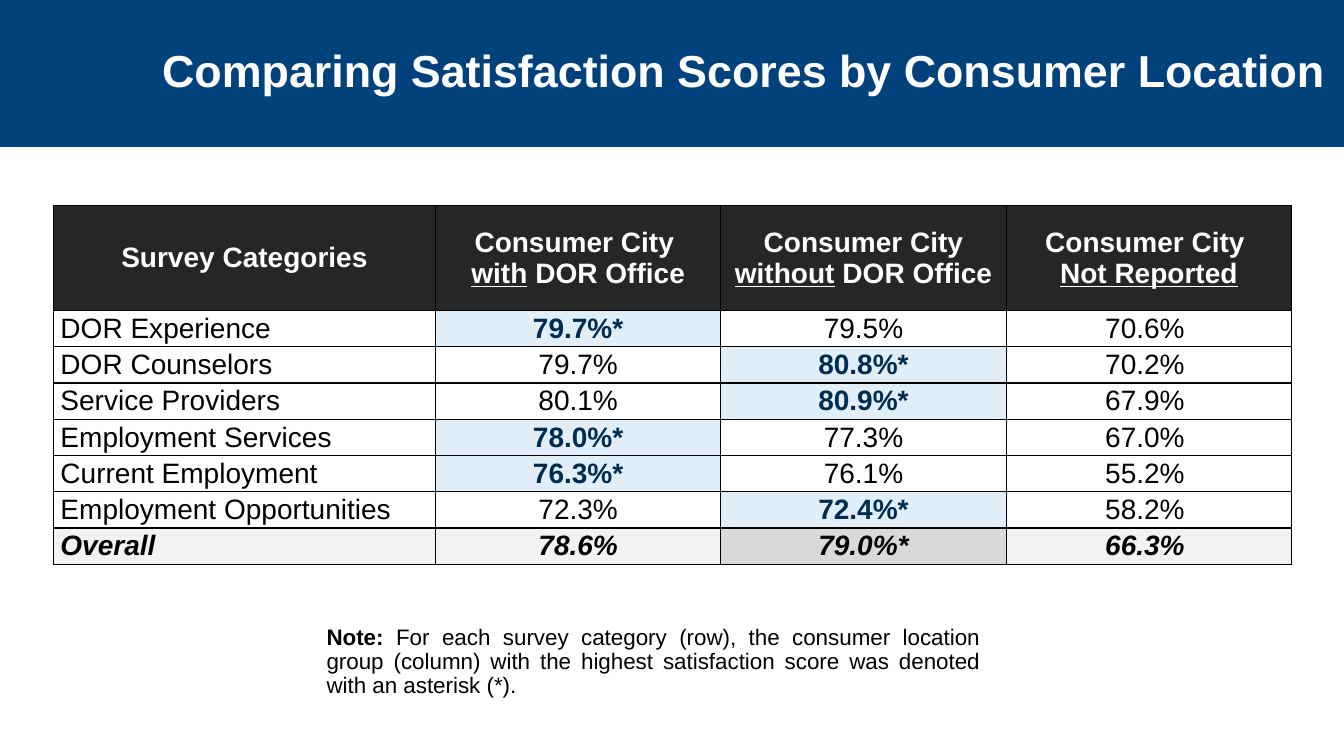
"""Build a slide that compares satisfaction scores by consumer location."""
from dataclasses import dataclass, field
from typing import Any

from lxml.etree import SubElement as Sub
from pptx import Presentation as Deck
from pptx.dml.color import RGBColor as Rgb
from pptx.enum.shapes import MSO_SHAPE as Shape
from pptx.enum.text import MSO_ANCHOR as Anchor, PP_ALIGN as Align
from pptx.oxml.ns import qn
from pptx.util import Inches, Pt

HUES = {
    "banner": "01417C", "rim": "01407A", "head": "262626", "white": "FFFFFF",
    "black": "000000", "navy": "002B52", "best": "E1EDF7",
    "total": "F2F2F2", "peak": "D9D9D9",
}
HEAD = {"size": Pt(20), "bold": True, "hue": "white"}
LINK = HEAD | {"underline": True}
BODY = {"size": Pt(20), "hue": "black"}
BEST = BODY | {"bold": True, "hue": "navy"}
TOTAL = BODY | {"bold": True, "italic": True}
TITLE = {"size": Pt(32), "bold": True, "hue": "white"}
NOTE = {"size": Pt(16), "hue": "black"}


@dataclass
class Run:
    text: str
    form: dict[str, Any]


@dataclass
class Entry:
    lines: list[list[Run]]
    fill: str
    align: Any = Align.CENTER


@dataclass
class Box:
    area: tuple[float, float, float, float]
    runs: list[Run]
    frame: dict[str, Any] = field(default_factory=dict)
    para: dict[str, Any] = field(default_factory=dict)


HEADS = [
    [[Run("Survey Categories", HEAD)]],
    [[Run("Consumer City ", HEAD)], [Run("with", LINK), Run(" DOR Office", HEAD)]],
    [[Run("Consumer City ", HEAD), Run("without", LINK), Run(" DOR Office", HEAD)]],
    [[Run("Consumer City ", HEAD)], [Run("Not Reported", LINK)]],
]
SCORES = [
    ("DOR Experience", "79.7%*", "79.5%", "70.6% "),
    ("DOR Counselors", "79.7%", "80.8%*", "70.2% "),
    ("Service Providers", "80.1%", "80.9%*", "67.9% "),
    ("Employment Services", "78.0%*", "77.3%", "67.0% "),
    ("Current Employment", "76.3%*", "76.1%", "55.2% "),
    ("Employment Opportunities", "72.3%", "72.4%*", "58.2% "),
    ("Overall", "78.6%", "79.0%*", "66.3% "),
]
WIDTHS = [3.79, 2.83, 2.83, 2.83]
TALLS = [1.04] + [0.36] * len(SCORES)
BOXES = [
    Box((1.51, 0, 11.83, 1.45),
        [Run("Comparing Satisfaction Scores by Consumer Location", TITLE)],
        {"vertical_anchor": Anchor.MIDDLE}, {"line_spacing": 0.9}),
    Box((3.14, 6.16, 6.68, 0.9),
        [Run("Note: ", NOTE | {"bold": True}),
         Run("For each survey category (row), the consumer location group (column) "
             "with the highest satisfaction score was denoted with an asterisk (*).", NOTE)],
        {}, {"line_spacing": 0.9, "alignment": Align.JUSTIFY}),
]


def tint(name: str) -> Rgb:
    """Return a named colour."""
    return Rgb.from_string(HUES[name])


def apply(item: Any, form: dict[str, Any]) -> None:
    """Set attributes from a format."""
    for key, value in form.items():
        setattr(item, key, value)


def write(para: Any, runs: list[Run]) -> None:
    """Add styled runs to a paragraph."""
    for run in runs:
        part = para.add_run()
        part.text = run.text
        form = {"name": "Arial"} | run.form
        part.font.color.rgb = tint(form.pop("hue"))
        apply(part.font, form)


def border(cell: Any) -> None:
    """Rule all four sides of a cell."""
    props = cell._tc.get_or_add_tcPr()
    for spot, side in enumerate(("lnL", "lnR", "lnT", "lnB")):
        line = Sub(props, qn(f"a:{side}"), w=str(Pt(1)))
        props.insert(spot, line)
        fill = Sub(line, qn("a:solidFill"))
        Sub(fill, qn("a:srgbClr"), val=HUES["black"])


def score(text: str, col: int, last: bool) -> Entry:
    """Style a score by its place and asterisk."""
    star = text.endswith("*")
    if last:
        form, fill = TOTAL, "peak" if star else "total"
    else:
        form, fill = (BEST, "best") if star else (BODY, "white")
    return Entry([[Run(text, form)]], fill, Align.CENTER if col else Align.LEFT)


def fill_cell(cell: Any, entry: Entry) -> None:
    """Fill one table cell."""
    apply(cell, {
        "vertical_anchor": Anchor.MIDDLE,
        "margin_left": Inches(0.07), "margin_right": Inches(0.07),
        "margin_top": 0, "margin_bottom": 0,
    })
    cell.fill.solid()
    cell.fill.fore_color.rgb = tint(entry.fill)
    border(cell)
    for spot, runs in enumerate(entry.lines):
        para = cell.text_frame.add_paragraph() if spot else cell.text_frame.paragraphs[0]
        para.alignment = entry.align
        write(para, runs)


def add_grid(slide: Any) -> None:
    """Draw the score table."""
    rows = [[Entry(lines, "head") for lines in HEADS]]
    for texts in SCORES:
        last = texts is SCORES[-1]
        rows.append([score(text, col, last) for col, text in enumerate(texts)])
    area = map(Inches, (0.53, 2.04, sum(WIDTHS), sum(TALLS)))
    grid = slide.shapes.add_table(len(rows), len(WIDTHS), *area).table
    for col, width in zip(grid.columns, WIDTHS):
        col.width = Inches(width)
    for row, tall, entries in zip(grid.rows, TALLS, rows):
        row.height = Inches(tall)
        for cell, entry in zip(row.cells, entries):
            fill_cell(cell, entry)


def add_box(slide: Any, box: Box) -> None:
    """Draw one text box."""
    frame = slide.shapes.add_textbox(*map(Inches, box.area)).text_frame
    apply(frame, {"word_wrap": True} | box.frame)
    para = frame.paragraphs[0]
    apply(para, box.para)
    write(para, box.runs)


def main() -> None:
    """Build and save the slide."""
    deck = Deck()
    apply(deck, {"slide_width": Inches(13.33), "slide_height": Inches(7.5)})
    slide = deck.slides.add_slide(deck.slide_layouts[6])
    banner = slide.shapes.add_shape(Shape.RECTANGLE, 0, 0, deck.slide_width, Inches(1.45))
    banner.shadow.inherit = False
    banner.fill.solid()
    banner.fill.fore_color.rgb = tint("banner")
    banner.line.color.rgb = tint("rim")
    banner.line.width = Pt(1)
    add_grid(slide)
    for box in BOXES:
        add_box(slide, box)
    deck.save("out.pptx")


if __name__ == "__main__":
    main()
